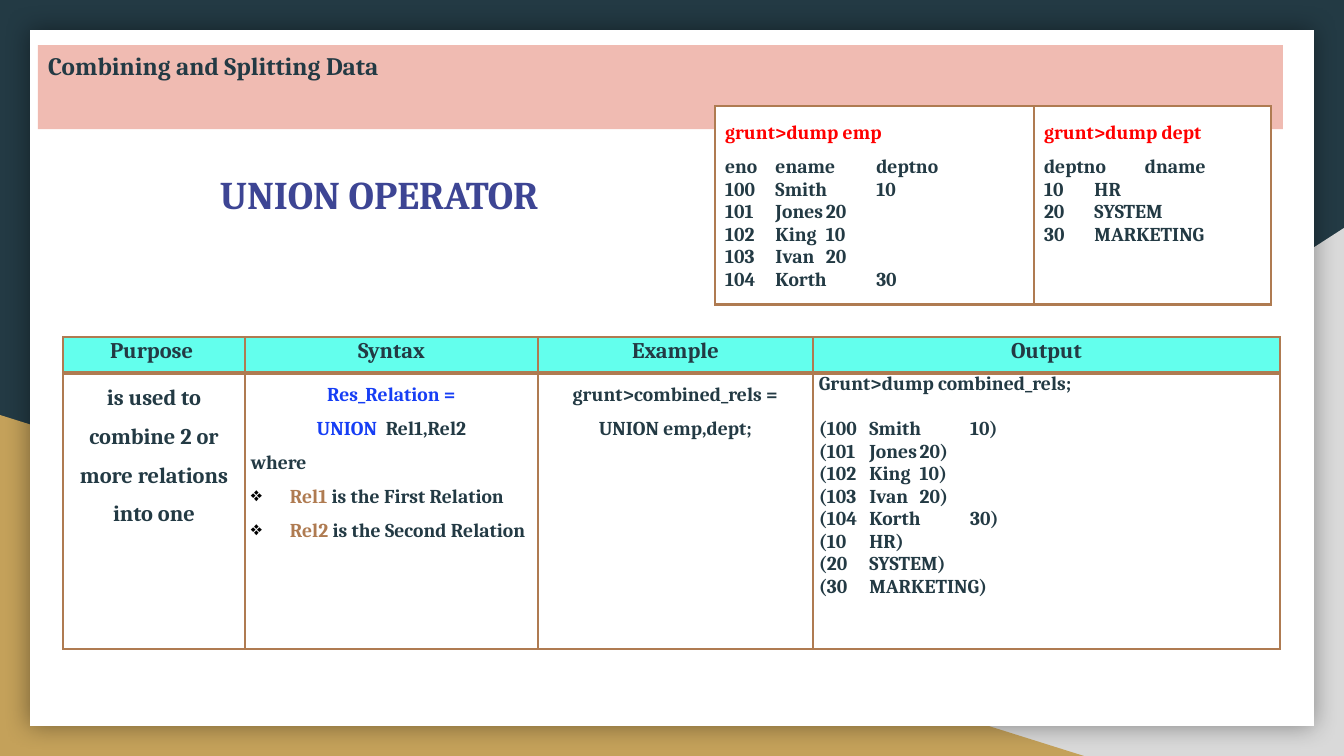
"""Build the slide about the union operator for combining data."""
from lxml.etree import SubElement
from pptx import Presentation
from pptx.dml.color import RGBColor
from pptx.enum.shapes import MSO_SHAPE
from pptx.enum.text import MSO_ANCHOR, MSO_AUTO_SIZE, PP_ALIGN
from pptx.oxml import parse_xml
from pptx.oxml.ns import nsdecls, qn
from pptx.util import Pt

PX = 9071
FONT = "Cambria"
COLORS = {
    "ink": "233A44", "gray": "D9D9D9", "gold": "C4A15A", "white": "FFFFFF",
    "pink": "F0BBB2", "aqua": "63FFED", "brown": "AF7B51", "indigo": "3D4594",
    "blue": "163EF5", "red": "FF0000", "black": "000000",
}


def write(paragraph, runs, size, align=PP_ALIGN.LEFT, spacing=1.0):
    """Fill a paragraph with (text, color name) runs."""
    paragraph.alignment = align
    paragraph.line_spacing = spacing
    for text, color in runs:
        run = paragraph.add_run()
        run.text = text
        run.font.name = FONT
        run.font.size = Pt(size)
        run.font.bold = True
        run.font.color.rgb = RGBColor.from_string(COLORS[color])


def fill_cell(cell, fill, paragraphs, size, top=1, bottom=1):
    """Give a cell its borders, fill and (runs, align, spacing) paragraphs."""
    properties = cell._tc.get_or_add_tcPr()
    for side, width in (("L", 1), ("R", 1), ("T", top), ("B", bottom)):
        properties.append(parse_xml(
            f'<a:ln{side} {nsdecls("a")} w="{Pt(width)}"><a:solidFill>'
            f'<a:srgbClr val="{COLORS["brown"]}"/></a:solidFill></a:ln{side}>'))
    cell.fill.solid()
    cell.fill.fore_color.rgb = RGBColor.from_string(COLORS[fill])
    frame = cell.text_frame
    for index, (runs, align, spacing) in enumerate(paragraphs):
        paragraph = frame.add_paragraph() if index else frame.paragraphs[0]
        write(paragraph, runs, size, align, spacing)


presentation = Presentation()
presentation.slide_width = 1344 * PX
presentation.slide_height = 756 * PX
slide = presentation.slides.add_slide(presentation.slide_layouts[5])
slide.background.fill.solid()
slide.background.fill.fore_color.rgb = RGBColor.from_string(COLORS["ink"])

backdrop = [
    (MSO_SHAPE.RIGHT_TRIANGLE, "gray", (526, 228, 818, 528)),
    (MSO_SHAPE.RIGHT_TRIANGLE, "gold", (0, 415, 1084, 341)),
    (MSO_SHAPE.RECTANGLE, "white", (30, 30, 1284, 696)),
]
backdrop_shapes = []
for kind, color, box in backdrop:
    shape = slide.shapes.add_shape(kind, *(length * PX for length in box))
    shape.shadow.inherit = False
    shape.fill.solid()
    shape.fill.fore_color.rgb = RGBColor.from_string(COLORS[color])
    shape.line.fill.background()
    backdrop_shapes.append(shape)
gray_triangle, gold_triangle, panel = backdrop_shapes
gray_triangle.element.spPr.find(qn("a:xfrm")).set("flipH", "1")
panel.element.spPr.find(qn("a:effectLst")).append(parse_xml(
    f'<a:outerShdw {nsdecls("a")} blurRad="{Pt(18)}" dist="0" dir="0">'
    f'<a:srgbClr val="{COLORS["black"]}"><a:alpha val="40000"/></a:srgbClr></a:outerShdw>'))

title = slide.shapes.title
title.left, title.top, title.width, title.height = (length * PX for length in (38, 45, 1245, 41))
title.fill.solid()
title.fill.fore_color.rgb = RGBColor.from_string(COLORS["pink"])
title.text_frame.word_wrap = True
title.text_frame.auto_size = MSO_AUTO_SIZE.SHAPE_TO_FIT_TEXT
title.text_frame.vertical_anchor = MSO_ANCHOR.TOP
write(title.text_frame.paragraphs[0], [("Combining and Splitting Data", "ink")], 18)
panel.element.addnext(title.element)

operator_table = slide.shapes.add_table(2, 4, 63 * PX, 337 * PX, 1217 * PX, 312 * PX).table
for column, width in zip(operator_table.columns, (182, 293, 275, 467)):
    column.width = width * PX
for row, height in zip(operator_table.rows, (36, 276)):
    row.height = height * PX
for cell in operator_table.iter_cells():
    cell.margin_left = cell.margin_right = 6 * PX
    cell.margin_top = cell.margin_bottom = 0

for index, heading in enumerate(("Purpose ", "Syntax", "Example", "Output")):
    cell = operator_table.cell(0, index)
    fill_cell(cell, "aqua", [([(heading, "ink")], PP_ALIGN.CENTER, 1.07)], 16, bottom=3)
    cell.text_frame.paragraphs[0].space_after = Pt(8)

output_lines = [
    "Grunt>dump combined_rels;", "(100\tSmith\t10)", "(101\tJones\t20)",
    "(102\tKing\t10)", "(103\tIvan\t20)", "(104\tKorth\t30)",
    "(10\tHR)", "(20\tSYSTEM)", "(30\tMARKETING)",
]
operator_details = [
    (16, [([("is used to combine 2 or more relations into one", "ink")], PP_ALIGN.CENTER, 1.5)]),
    (14, [
        ([("Res_Relation =", "blue")], PP_ALIGN.CENTER, 1.5),
        ([("UNION  ", "blue"), ("Rel1,Rel2", "ink")], PP_ALIGN.CENTER, 1.5),
        ([("where", "ink")], PP_ALIGN.LEFT, 1.5),
        ([("Rel1", "brown"), (" is the First Relation", "ink")], PP_ALIGN.JUSTIFY, 1.5),
        ([("Rel2 ", "brown"), ("is the Second Relation", "ink")], PP_ALIGN.JUSTIFY, 1.5),
    ]),
    (14, [([(line, "ink")], PP_ALIGN.CENTER, 1.5)
          for line in ("grunt>combined_rels =", "UNION emp,dept;")]),
    (14, [([(line, "ink")], PP_ALIGN.LEFT, 1.0) for line in output_lines]),
]
for index, (size, paragraphs) in enumerate(operator_details):
    fill_cell(operator_table.cell(1, index), "white", paragraphs, size, top=3)

for paragraph in operator_table.cell(1, 1).text_frame.paragraphs[3:]:
    properties = paragraph._p.get_or_add_pPr()
    properties.set("marL", str(39 * PX))
    properties.set("indent", str(-39 * PX))
    bullet_color = SubElement(properties, qn("a:buClr"))
    SubElement(bullet_color, qn("a:srgbClr")).set("val", COLORS["black"])
    SubElement(properties, qn("a:buChar")).set("char", "❖")
operator_table.cell(1, 3).text_frame.paragraphs[0].space_after = Pt(16)

operator_name = slide.shapes.add_textbox(203 * PX, 165 * PX, 352 * PX, 57 * PX)
operator_name.text_frame.word_wrap = False
operator_name.text_frame.auto_size = MSO_AUTO_SIZE.SHAPE_TO_FIT_TEXT
name_paragraph = operator_name.text_frame.paragraphs[0]
write(name_paragraph, [("UNION OPERATOR", "indigo")], 28, PP_ALIGN.CENTER)
name_paragraph.runs[0].font._element.insert(0, parse_xml(
    f'<a:ln {nsdecls("a")} w="{Pt(0.75)}"><a:solidFill>'
    f'<a:srgbClr val="{COLORS["brown"]}"/></a:solidFill></a:ln>'))

dump_table = slide.shapes.add_table(1, 2, 715 * PX, 106 * PX, 556 * PX, 198 * PX).table
relations = [
    (319, "grunt>dump emp", "eno\tename\tdeptno",
     ["100\tSmith\t10", "101\tJones\t20", "102\tKing\t10", "103\tIvan\t20", "104\tKorth\t30"]),
    (237, "grunt>dump dept", "deptno\tdname", ["10\tHR", "20\tSYSTEM", "30\tMARKETING"]),
]
for index, (width, command, heading, records) in enumerate(relations):
    dump_table.columns[index].width = width * PX
    paragraphs = [([(command, "red")], PP_ALIGN.LEFT, 1.5), ([(heading, "ink")], PP_ALIGN.LEFT, 1.5)]
    paragraphs += [([(record, "ink")], PP_ALIGN.LEFT, 1.0) for record in records]
    fill_cell(dump_table.cell(0, index), "white", paragraphs, 14, bottom=3)

presentation.save("out.pptx")
